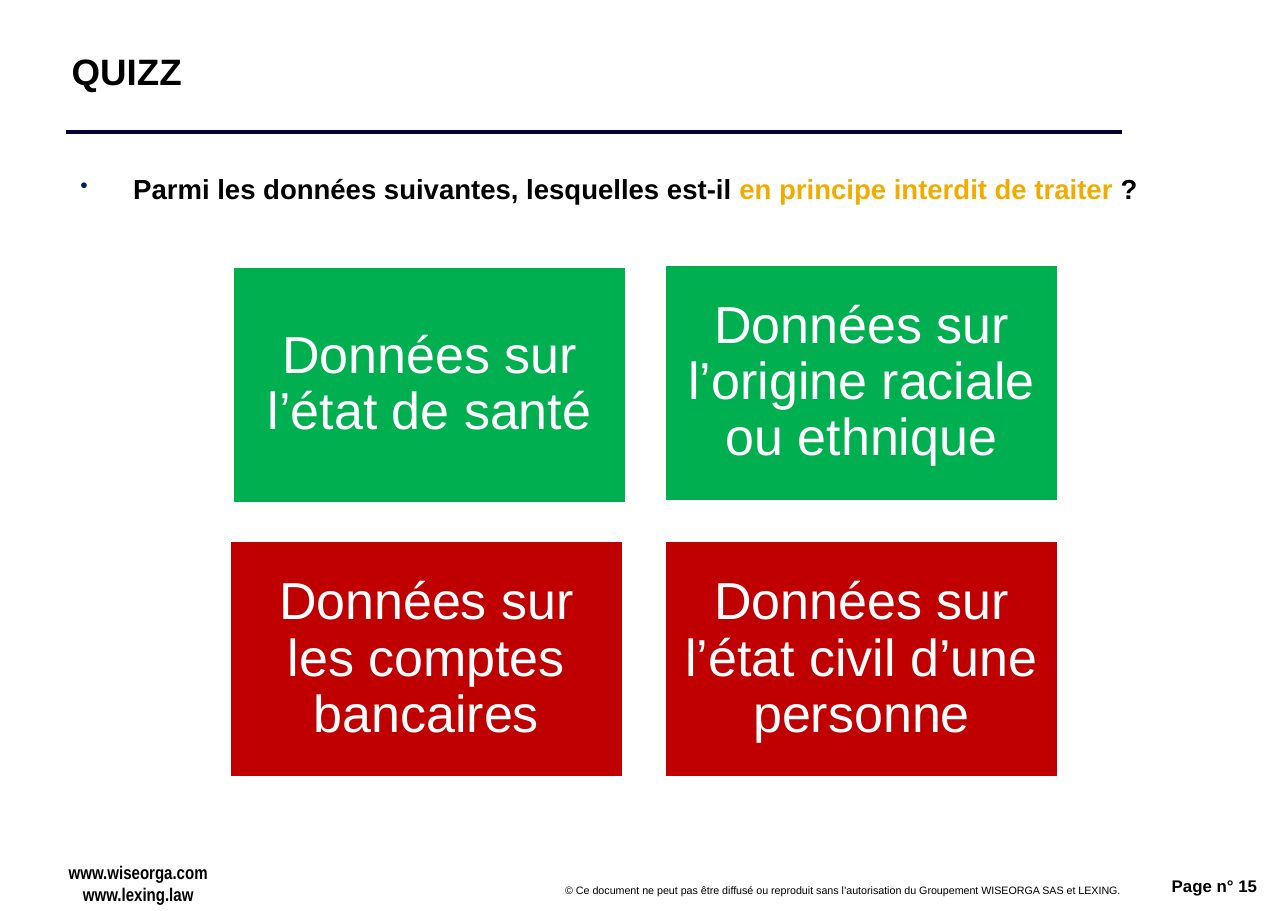
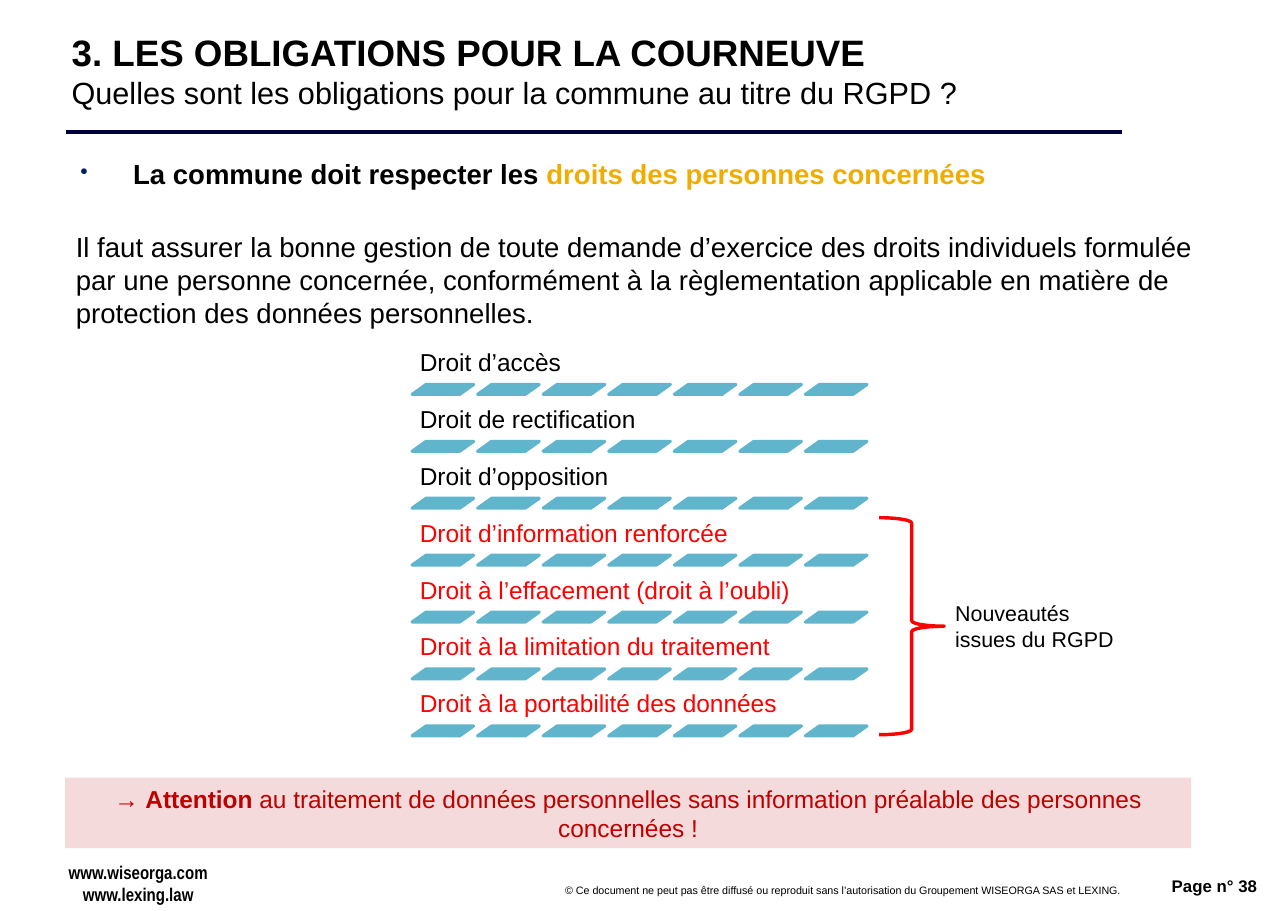
from lxml import etree
from pptx import Presentation
from pptx import util as u
from pptx.dml.color import RGBColor
from pptx.enum import shapes, text
from pptx.oxml import ns


class Theme:
    font = "Arial"
    narrow_font = "Arial Narrow"
    black = "000000"
    white = "FFFFFF"
    navy = "00003A"
    bullet = "002060"
    gold = "F0AD00"
    green = "00B050"
    dark_red = "C00000"
    red = "FF0000"
    pink = "F4DADA"
    blue = "60B5CC"
    title = 24
    subtitle = 20
    body = 18
    answer = 34
    item = 16
    label = 14
    address = 12
    page = 11
    copyright = 7


PX = 9144
LEFT, CENTER, RIGHT = text.PP_ALIGN.LEFT, text.PP_ALIGN.CENTER, text.PP_ALIGN.RIGHT
TOP, MIDDLE, BOTTOM = text.MSO_ANCHOR.TOP, text.MSO_ANCHOR.MIDDLE, text.MSO_ANCHOR.BOTTOM


def add_shape(slide, preset, bounds, fill=None, line=None, width=2):
    shape = slide.shapes.add_shape(preset, *[round(n * PX) for n in bounds])
    shape.shadow.inherit = False
    if fill:
        shape.fill.solid()
        shape.fill.fore_color.rgb = RGBColor.from_string(fill)
    else:
        shape.fill.background()
    if line:
        shape.line.color.rgb = RGBColor.from_string(line)
        shape.line.width = u.Pt(width)
    else:
        shape.line.fill.background()
    return shape


def write(shape, paragraphs, size, color=Theme.black, bold=False, align=LEFT,
          anchor=TOP, inset=(10, 5), font=Theme.font, bullet=False, spacing=None):
    frame = shape.text_frame
    frame.word_wrap = True
    frame.auto_size = text.MSO_AUTO_SIZE.NONE
    frame.vertical_anchor = anchor
    frame.margin_left = frame.margin_right = inset[0] * PX
    frame.margin_top = frame.margin_bottom = inset[1] * PX
    for index, runs in enumerate(paragraphs):
        paragraph = frame.add_paragraph() if index else frame.paragraphs[0]
        paragraph.alignment = align
        if spacing:
            paragraph.line_spacing = spacing
        if bullet and index == 0:
            properties = paragraph._p.get_or_add_pPr()
            properties.set("marL", str(52 * PX))
            properties.set("indent", str(-48 * PX))
            color_element = etree.SubElement(properties, ns.qn("a:buClr"))
            etree.SubElement(color_element, ns.qn("a:srgbClr"), val=Theme.bullet)
            etree.SubElement(properties, ns.qn("a:buSzPct"), val="80000")
            etree.SubElement(properties, ns.qn("a:buChar"), char="•")
        paragraph.font.name = font
        paragraph.font.size = u.Pt(size)
        paragraph.font.bold = bold
        paragraph.font.color.rgb = RGBColor.from_string(color)
        for content, changes in runs:
            run = paragraph.add_run()
            run.text = content
            if "color" in changes:
                run.font.color.rgb = RGBColor.from_string(changes["color"])
            if "bold" in changes:
                run.font.bold = changes["bold"]
    return frame


presentation = Presentation()
presentation.slide_width = 1169 * PX
presentation.slide_height = 827 * PX

pages = [
    ("QUIZZ", None, 15),
    ("3. LES OBLIGATIONS POUR LA COURNEUVE",
     "Quelles sont les obligations pour la commune au titre du RGPD ?", 38),
]
for title, subtitle, number in pages:
    slide = presentation.slides.add_slide(presentation.slide_layouts[5])
    heading = slide.shapes.title
    heading.left, heading.top, heading.width, heading.height = [n * PX for n in (59, 17, 959, 94)]
    heading.fill.solid()
    heading.fill.fore_color.rgb = RGBColor.from_string(Theme.white)
    frame = write(heading, [[(title, {})]], Theme.title, bold=True, anchor=MIDDLE, inset=(6, 6))
    if subtitle:
        paragraph = frame.paragraphs[0]
        paragraph.add_line_break()
        run = paragraph.add_run()
        run.text = subtitle
        run.font.size = u.Pt(Theme.subtitle)
        run.font.bold = False

    rule = slide.shapes.add_connector(
        shapes.MSO_CONNECTOR.STRAIGHT, 60 * PX, 120 * PX, 1018 * PX, 120 * PX)
    rule.line.color.rgb = RGBColor.from_string(Theme.navy)
    rule.line.width = u.Pt(3)
    etree.SubElement(rule._element.spPr, ns.qn("a:effectLst"))

    copyright_box = slide.shapes.add_textbox(*[n * PX for n in (382, 796, 646, 23)])
    write(copyright_box, [[("© Ce document ne peut pas être diffusé ou reproduit sans l’autorisation "
                            "du Groupement WISEORGA SAS et LEXING.", {})]],
          Theme.copyright, align=RIGHT, inset=(11, 6))
    page_box = slide.shapes.add_textbox(*[n * PX for n in (1030, 790, 121, 34)])
    write(page_box, [[(f"Page n° {number}", {})]], Theme.page, bold=True, align=RIGHT)
    address_box = slide.shapes.add_textbox(*[n * PX for n in (48, 776, 155, 52)])
    write(address_box, [[("www.wiseorga.com", {})], [("www.lexing.law", {})]],
          Theme.address, bold=True, align=CENTER, inset=(5, 6), font=Theme.narrow_font)

quiz, rights = presentation.slides

question = quiz.shapes.add_textbox(*[n * PX for n in (59, 151, 1009, 46)])
write(question, [[("Parmi les données suivantes, lesquelles est-il ", {}),
                  ("en principe interdit de traiter ", {"color": Theme.gold}),
                  ("?", {})]], Theme.body, bold=True, bullet=True)

answers = [
    ("Données sur l’état de santé", 211, 242, Theme.green),
    ("Données sur l’origine raciale ou ethnique", 603, 240, Theme.green),
    ("Données sur les comptes bancaires", 208, 491, Theme.dark_red),
    ("Données sur l’état civil d’une personne", 603, 491, Theme.dark_red),
]
for answer, left, top, fill in answers:
    card = add_shape(quiz, shapes.MSO_SHAPE.RECTANGLE, (left, top, 358, 215), fill, Theme.white)
    write(card, [[(answer, {})]], Theme.answer, Theme.white, align=CENTER,
          anchor=MIDDLE, inset=(14, 14), spacing=0.9)

duty = rights.shapes.add_textbox(*[n * PX for n in (59, 138, 1038, 205)])
frame = write(duty, [
    [("La commune doit respecter les ", {"bold": True}),
     ("droits des personnes concernées", {"bold": True, "color": Theme.gold})],
    [("Il faut assurer la bonne gestion de toute demande d’exercice des droits individuels "
      "formulée par une personne concernée, conformément à la règlementation applicable "
      "en matière de protection des données personnelles.", {})],
], Theme.body, bullet=True)
frame.paragraphs[1].space_before = u.Pt(26)

items = [
    ("Droit d’accès", Theme.black),
    ("Droit de rectification", Theme.black),
    ("Droit d’opposition", Theme.black),
    ("Droit d’information renforcée", Theme.red),
    ("Droit à l’effacement (droit à l’oubli)", Theme.red),
    ("Droit à la limitation du traitement", Theme.red),
    ("Droit à la portabilité des données", Theme.red),
]
DASHES = 7
ROW_PITCH = 310 / (len(items) - 1)
DASH_PITCH = 357 / (DASHES - 1)
for row, (item, color) in enumerate(items):
    dash_top = 349 + row * ROW_PITCH
    item_box = rights.shapes.add_textbox(
        *[round(n * PX) for n in (374, dash_top - 38, 421, 38)])
    write(item_box, [[(item, {})]], Theme.item, color, anchor=BOTTOM, inset=(7, 7), spacing=0.9)
    for column in range(DASHES):
        dash = add_shape(rights, shapes.MSO_SHAPE.PARALLELOGRAM,
                         (374 + column * DASH_PITCH, dash_top, 56, 9), Theme.blue, Theme.blue)
        dash.adjustments[0] = 1.41

add_shape(rights, shapes.MSO_SHAPE.RIGHT_BRACE, (798, 470, 59, 197), line=Theme.red, width=2.25)
novelty = rights.shapes.add_textbox(*[n * PX for n in (857, 540, 171, 57)])
write(novelty, [[("Nouveautés issues du RGPD", {})]], Theme.label, anchor=MIDDLE)

warning = add_shape(rights, shapes.MSO_SHAPE.RECTANGLE, (59, 706, 1022, 64), Theme.pink)
write(warning, [[("→ ", {}), ("Attention", {"bold": True}),
                 (" au traitement de données personnelles sans information préalable "
                  "des personnes concernées !", {})]],
      Theme.item, Theme.dark_red, align=CENTER, anchor=MIDDLE)

presentation.save("out.pptx")
